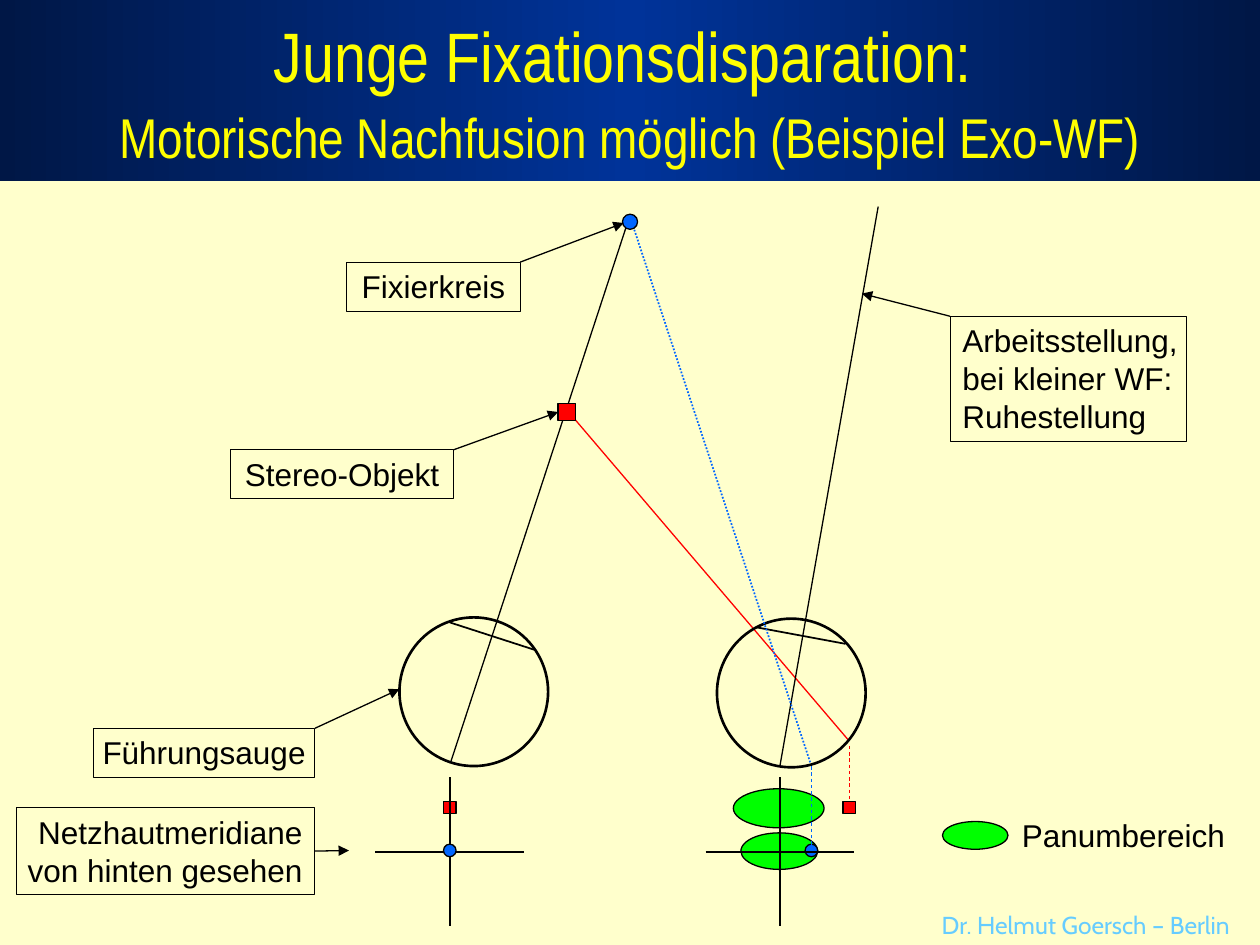
from copy import deepcopy

from pptx import Presentation
from pptx.dml.color import RGBColor
from pptx.enum.dml import MSO_LINE
from pptx.enum.shapes import MSO_CONNECTOR, MSO_SHAPE
from pptx.enum.text import MSO_ANCHOR, PP_ALIGN
from pptx.oxml.ns import qn
from pptx.oxml.xmlchemy import OxmlElement
from pptx.util import Inches, Pt

RECT, OVAL = MSO_SHAPE.RECTANGLE, MSO_SHAPE.OVAL
STRAIGHT = MSO_CONNECTOR.STRAIGHT
DASH, DOT = MSO_LINE.DASH, MSO_LINE.ROUND_DOT
LEFT, CENTER, RIGHT = PP_ALIGN.LEFT, PP_ALIGN.CENTER, PP_ALIGN.RIGHT
TOP, BOTTOM = MSO_ANCHOR.TOP, MSO_ANCHOR.BOTTOM

BLACK, RED, BLUE, GREEN = "000000", "FF0000", "0066FF", "00FF00"
CREAM, YELLOW, SKY = "FFFFCC", "FFFF00", "66CCFF"
NAVY, ROYAL = "001746", "003399"
EYE = 1.18
ROW = 6.76  # height of the horizontal retinal meridians


def rgb(code):
    return RGBColor.from_string(code)


def apply(target, values):
    for name, value in values.items():
        setattr(target, name, value)


def write(shape, text, size=18, font="Arial", color=BLACK, align=LEFT,
          anchor=TOP, pad=(0, 0, 0, 0), space=1.0):
    """Fill a text frame; pad is left, top, right, bottom in inches."""
    frame = shape.text_frame
    sides = ("margin_left", "margin_top", "margin_right", "margin_bottom")
    apply(frame, dict(zip(sides, map(Inches, pad))))
    apply(frame, {"word_wrap": True, "vertical_anchor": anchor, "text": text})
    para = frame.paragraphs[0]
    apply(para, {"alignment": align, "line_spacing": space})
    for run in para.runs:
        apply(run.font, {"size": Pt(size), "name": font})
        run.font.color.rgb = rgb(color)


def add_text(slide, box, text, **style):
    write(slide.shapes.add_textbox(*map(Inches, box)), text, **style)


def add_form(slide, kind, box, fill=None, width=0.75):
    form = slide.shapes.add_shape(kind, *map(Inches, box))
    form.shadow.inherit = False
    if fill:
        form.fill.solid()
        form.fill.fore_color.rgb = rgb(fill)
    else:
        form.fill.background()
    form.line.color.rgb = rgb(BLACK)
    form.line.width = Pt(width)
    return form


def add_mark(slide, kind, x, y, size, fill):
    """Place a small symbol by its centre."""
    return add_form(slide, kind, (x - size / 2, y - size / 2, size, size), fill)


def add_line(slide, start, end, color=BLACK, width=0.75, dash=None, arrow=False):
    line = slide.shapes.add_connector(STRAIGHT, *map(Inches, (*start, *end)))
    line.line.color.rgb = rgb(color)
    line.line.width = Pt(width)
    if dash:
        line.line.dash_style = dash
    if arrow:
        tip = OxmlElement("a:tailEnd")
        tip.set("type", "triangle")
        line.line._get_or_add_ln().append(tip)
    line._element.spPr.append(OxmlElement("a:effectLst"))
    return line


def add_label(slide, box, text, align=CENTER, pad=(0.04, 0.04, 0.04, 0.04)):
    label = add_form(slide, RECT, box, width=0.5)
    write(label, text, align=align, pad=pad)
    return label


def add_eye(slide, left, top, lens, axis):
    add_line(slide, *lens, width=1)
    add_form(slide, OVAL, (left, top, EYE, EYE), width=1.5)
    add_line(slide, *axis)


def add_cross(slide, x):
    half = EYE / 2
    add_line(slide, (x - half, ROW), (x + half, ROW), width=1)
    add_line(slide, (x, ROW - half), (x, ROW + half), width=1)


def add_head(slide):
    band = add_form(slide, RECT, (0, 0, 10, 1.44))
    band.line.fill.background()
    band.fill.gradient()
    band.fill.gradient_angle = 0
    stops = band._element.spPr.find(".//" + qn("a:gsLst"))
    stops.append(deepcopy(stops[-1]))
    for stop, color, place in zip(band.fill.gradient_stops,
                                  (NAVY, ROYAL, NAVY), (0, 0.5, 1)):
        stop.color.rgb = rgb(color)
        stop.position = place
    style = {"font": "Arial Narrow", "color": YELLOW, "align": CENTER, "space": 1.1}
    add_text(slide, (0.4, 0.03, 9.21, 0.73), "Junge Fixationsdisparation: ",
             size=40, **style)
    add_text(slide, (0.4, 0.76, 9.21, 0.59),
             "Motorische Nachfusion möglich (Beispiel Exo-WF)",
             size=32, anchor=BOTTOM, **style)


def add_panum(slide):
    for box in ((5.88, 6.61, 0.61, 0.29), (7.48, 6.52, 0.52, 0.22),
                (5.82, 6.26, 0.72, 0.31)):
        add_form(slide, OVAL, box, GREEN)
    add_text(slide, (8.11, 6.48, 1.72, 0.3), "Panumbereich")


def add_rays(slide):
    image = add_mark(slide, RECT, 6.74, 6.41, 0.1, RED)
    add_line(slide, (4.53, 3.29), (6.73, 5.87), RED)
    drop = add_line(slide, (6.74, 5.92), (6.74, 6.46), RED, 0.5, DASH)
    drop.end_connect(image, 2)
    add_mark(slide, RECT, 3.57, 6.41, 0.1, RED)
    add_eye(slide, 5.69, 4.91, ((6.71, 5.11), (6.01, 4.98)),
            ((6.19, 6.08), (6.97, 1.64)))
    add_mark(slide, OVAL, 6.44, 6.75, 0.1, BLUE)
    add_eye(slide, 3.17, 4.9, ((3.57, 4.94), (4.25, 5.16)),
            ((3.58, 6.04), (4.98, 1.77)))
    for x in (3.57, 6.19):
        add_cross(slide, x)
    add_mark(slide, OVAL, 3.57, 6.75, 0.1, BLUE)
    add_line(slide, (6.43, 6.05), (5.02, 1.78), BLUE, 1, DOT)
    add_mark(slide, OVAL, 5, 1.76, 0.12, BLUE)
    add_line(slide, (6.44, 6.08), (6.44, 6.75), BLUE, 0.5, DASH)


def add_labels(slide):
    add_label(slide, (7.54, 2.51, 1.88, 0.99),
              "Arbeitsstellung,\vbei kleiner WF:\vRuhestellung",
              LEFT, (0.1, 0.04, 0.04, 0.04))
    add_line(slide, (7.54, 2.51), (6.84, 2.33), arrow=True)

    add_label(slide, (2.75, 2.08, 1.38, 0.39), "Fixierkreis")
    add_line(slide, (4.13, 2.08), (4.95, 1.77), arrow=True)

    target = add_mark(slide, RECT, 4.5, 3.27, 0.14, RED)
    add_label(slide, (1.83, 3.57, 1.77, 0.39), "Stereo-Objekt")
    pointer = add_line(slide, (3.6, 3.57), (4.43, 3.27), arrow=True)
    pointer.end_connect(target, 1)

    add_label(slide, (0.74, 5.78, 1.76, 0.39), "Führungsauge")
    add_line(slide, (2.5, 5.78), (3.17, 5.47), arrow=True)

    retina = add_label(slide, (0.13, 6.41, 2.37, 0.69),
                       "Netzhautmeridiane\vvon hinten gesehen",
                       RIGHT, (0.04, 0.04, 0.1, 0.04))
    pointer = add_line(slide, (2.5, 6.75), (2.77, 6.75), arrow=True)
    pointer.begin_connect(retina, 3)


def main():
    deck = Presentation()
    apply(deck, {"slide_width": Inches(10), "slide_height": Inches(7.5)})
    slide = deck.slides.add_slide(deck.slide_layouts[6])
    slide.background.fill.solid()
    slide.background.fill.fore_color.rgb = rgb(CREAM)
    add_panum(slide)
    add_rays(slide)
    add_labels(slide)
    add_text(slide, (7.25, 7.17, 2.61, 0.25), "Dr. Helmut Goersch – Berlin",
             size=14, font="Cabin", color=SKY, align=RIGHT,
             pad=(0.1, 0.05, 0.1, 0.05))
    add_head(slide)
    deck.save("out.pptx")


if __name__ == "__main__":
    main()
